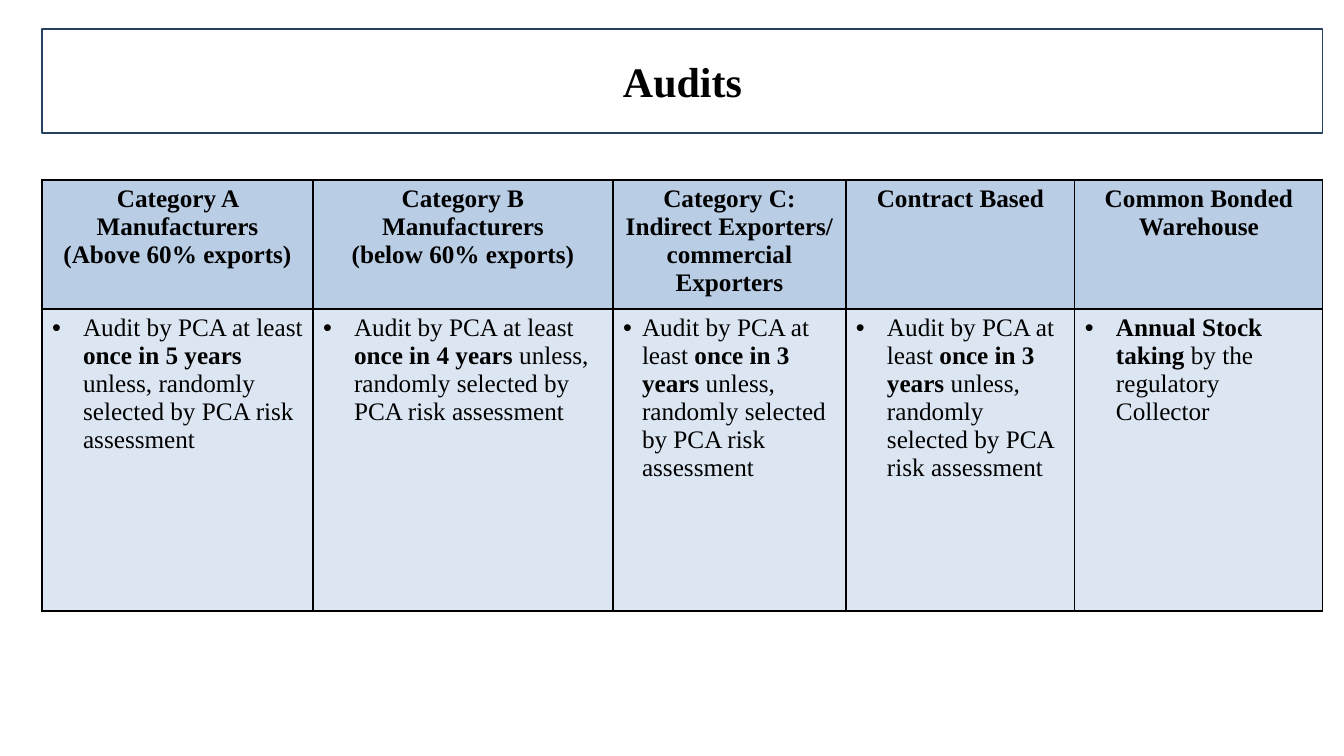
from lxml import etree
from pptx import Presentation
from pptx import util as u
from pptx.dml.color import RGBColor
from pptx.enum import shapes, text
from pptx.oxml.ns import qn

PX = 914400 / 100.8
FONT = "Times New Roman"
LEFT, WIDTH = 42, 1281
COLUMN_WIDTHS = [271, 300, 233, 229, 248]
ROW_HEIGHTS = [129, 302]

HEADINGS = [
    ["Category A Manufacturers", "(Above 60% exports)"],
    ["Category B Manufacturers", "(below 60% exports)"],
    ["Category C: Indirect Exporters/ commercial Exporters"],
    ["Contract Based"],
    ["Common Bonded Warehouse"],
]


def audit_rule(years):
    return [("Audit by PCA at least ", False),
            (f"once in {years} years", True),
            (" unless, randomly selected by PCA risk assessment", False)]


# Each rule: runs of (words, bold), then the bullet indent in px
RULES = [
    (audit_rule(5), 31),
    (audit_rule(4), 31),
    (audit_rule(3), 19),
    (audit_rule(3), 31),
    ([("Annual Stock taking ", True), ("by the regulatory Collector", False)], 31),
]


def px(length):
    return u.Emu(round(length * PX))


def color(value):
    return RGBColor.from_string(value)


def style(font, size, bold=None):
    font.name = FONT
    font.size = u.Pt(size)
    font.bold = bold
    font.color.rgb = color("000000")


def add_title(slide, words):
    shape = slide.shapes.add_shape(
        shapes.MSO_SHAPE.RECTANGLE, px(LEFT), px(29), px(WIDTH), px(104))
    shape.shadow.inherit = False
    shape.fill.background()
    shape.line.color.rgb = color("254061")
    shape.line.width = u.Pt(0.75)
    shape.text_frame.vertical_anchor = text.MSO_ANCHOR.MIDDLE
    paragraph = shape.text_frame.paragraphs[0]
    paragraph.text = words
    paragraph.alignment = text.PP_ALIGN.CENTER
    style(paragraph.font, 30, True)


def style_cell(cell, fill):
    cell.fill.solid()
    cell.fill.fore_color.rgb = color(fill)
    properties = cell._tc.get_or_add_tcPr()
    # Borders come before the fill in the cell properties
    for index, side in enumerate(("lnL", "lnR", "lnT", "lnB")):
        border = etree.Element(qn(f"a:{side}"), w=str(u.Pt(1)))
        solid = etree.SubElement(border, qn("a:solidFill"))
        etree.SubElement(solid, qn("a:srgbClr"), val="000000")
        properties.insert(index, border)


def fill_heading(cell, lines):
    style_cell(cell, "B9CDE5")
    cell.text = "\n".join(lines)
    for paragraph in cell.text_frame.paragraphs:
        paragraph.alignment = text.PP_ALIGN.CENTER
        style(paragraph.font, 18, True)


def fill_rule(cell, runs, indent):
    style_cell(cell, "DCE6F2")
    paragraph = cell.text_frame.paragraphs[0]
    for words, bold in runs:
        run = paragraph.add_run()
        run.text = words
        style(run.font, 18, bold)
    properties = paragraph._p.get_or_add_pPr()
    properties.set("marL", str(px(indent)))
    properties.set("indent", str(-px(indent)))
    etree.SubElement(properties, qn("a:buFont"), typeface="Arial")
    etree.SubElement(properties, qn("a:buChar"), char="•")


def add_audit_table(slide):
    table = slide.shapes.add_table(
        len(ROW_HEIGHTS), len(COLUMN_WIDTHS),
        px(LEFT), px(180), px(WIDTH), px(sum(ROW_HEIGHTS))).table
    table.horz_banding = False
    for row, height in zip(table.rows, ROW_HEIGHTS):
        row.height = px(height)
    for index, width in enumerate(COLUMN_WIDTHS):
        table.columns[index].width = px(width)
        fill_heading(table.cell(0, index), HEADINGS[index])
        fill_rule(table.cell(1, index), *RULES[index])


def main():
    presentation = Presentation()
    presentation.slide_width = px(1344)
    presentation.slide_height = px(756)
    slide = presentation.slides.add_slide(presentation.slide_layouts[6])
    # Heading box
    add_title(slide, "Audits")
    # Audit rules by category
    add_audit_table(slide)
    presentation.save("out.pptx")


if __name__ == "__main__":
    main()
